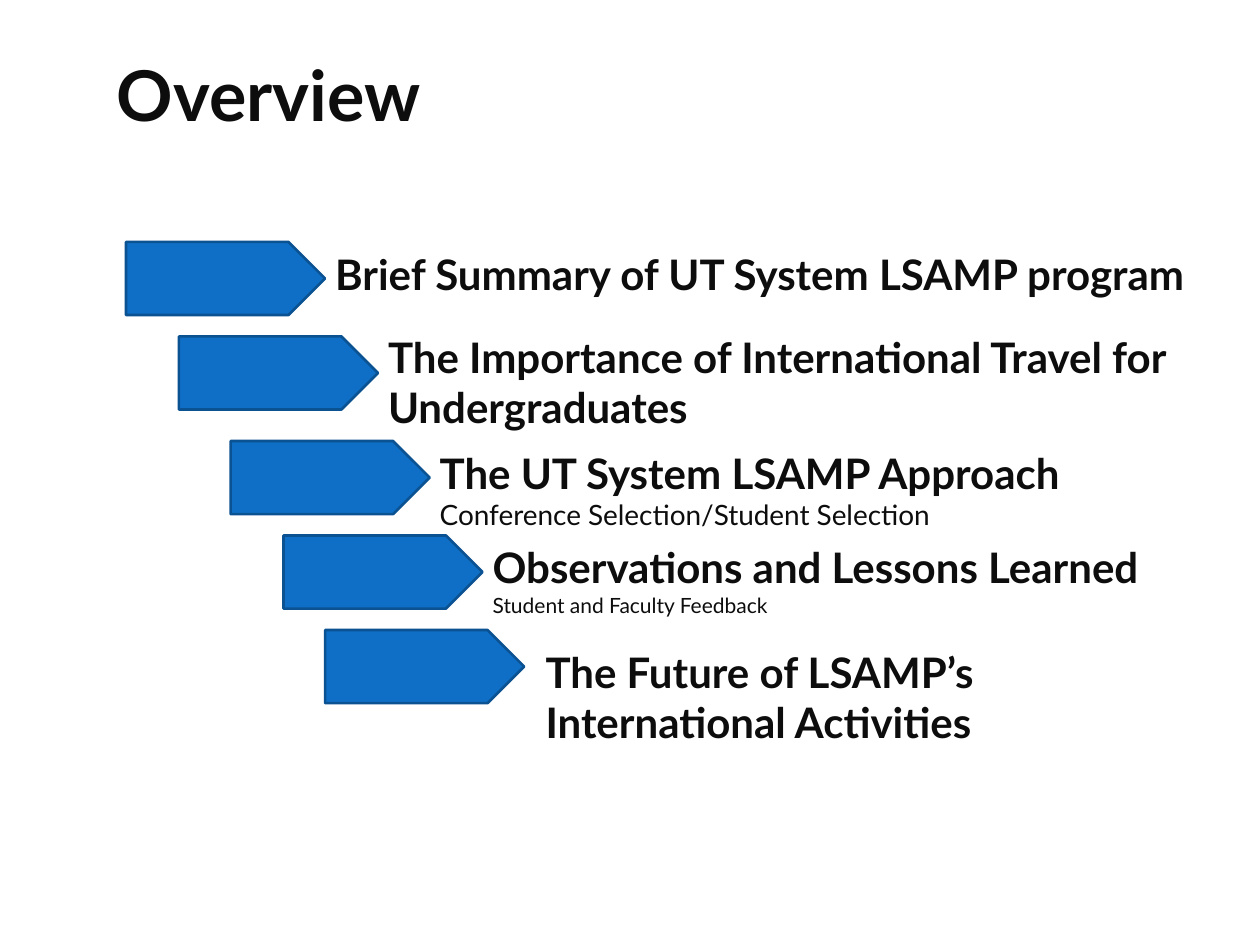
from typing import NamedTuple

from pptx import Presentation
from pptx import util as u
from pptx.dml.color import RGBColor
from pptx.enum import shapes, text

FONT = "Lato"
INK = "0D0D0D"
BLUE = "0F6FC6"
EDGE = "0B5292"


class Step(NamedTuple):
    """One agenda item: arrow corner, text box and wording."""
    x: float
    y: float
    left: float
    top: float
    width: float
    height: float
    head: str
    sub: str = ""
    size: int = 12


STEPS = [
    Step(1, 1.92, 2.5, 1.92, 7.25, 0.92,
         "Brief Summary of UT System LSAMP program"),
    Step(1.42, 2.67, 2.92, 2.58, 6.83, 0.75,
         "The Importance of International Travel for Undergraduates"),
    Step(1.83, 3.5, 3.33, 3.5, 5.25, 0.92,
         "The UT System LSAMP Approach",
         "Conference Selection/Student Selection", 16),
    Step(2.25, 4.25, 3.75, 4.25, 5.5, 0.92,
         "Observations and Lessons Learned", "Student and Faculty Feedback"),
    Step(2.58, 5, 4.17, 5.08, 5.58, 1.33,
         "The Future of LSAMP’s International Activities"),
]


def color(code: str) -> RGBColor:
    return RGBColor.from_string(code)


def add_text(slide, left: float, top: float, width: float, height: float,
             words: str, size: int):
    """Add a bold, wrapping text box and return its frame."""
    box = slide.shapes.add_textbox(u.Inches(left), u.Inches(top),
                                   u.Inches(width), u.Inches(height))
    frame = box.text_frame
    frame.word_wrap = True
    para = frame.paragraphs[0]
    para.add_run().text = words
    font = para.font
    font.name, font.size, font.bold = FONT, u.Pt(size), True
    font.color.rgb = color(INK)
    return frame


def add_arrow(slide, step: Step) -> None:
    arrow = slide.shapes.add_shape(
        shapes.MSO_SHAPE.PENTAGON, u.Inches(step.x), u.Inches(step.y),
        u.Inches(1.58), u.Inches(0.58))
    arrow.shadow.inherit = False
    arrow.fill.solid()
    arrow.fill.fore_color.rgb = color(BLUE)
    arrow.line.color.rgb = color(EDGE)
    arrow.line.width = u.Pt(1.5)


def add_label(slide, step: Step) -> None:
    frame = add_text(slide, step.left, step.top, step.width, step.height,
                     step.head, 24)
    frame.margin_left = u.Inches(0.16)
    if step.sub:
        para = frame.paragraphs[0]
        para.add_line_break()
        run = para.add_run()
        run.text = step.sub
        run.font.size, run.font.bold = u.Pt(step.size), False


def main() -> None:
    deck = Presentation()
    deck.slide_width, deck.slide_height = u.Inches(10), u.Inches(7.5)
    slide = deck.slides.add_slide(deck.slide_layouts[6])

    # Title
    title = add_text(slide, 0.83, 0.08, 9, 1.33, "Overview", 40)
    title.vertical_anchor = text.MSO_ANCHOR.MIDDLE

    # Staircase of arrows with their labels
    for step in STEPS:
        add_label(slide, step)
        add_arrow(slide, step)

    deck.save("out.pptx")


if __name__ == "__main__":
    main()
